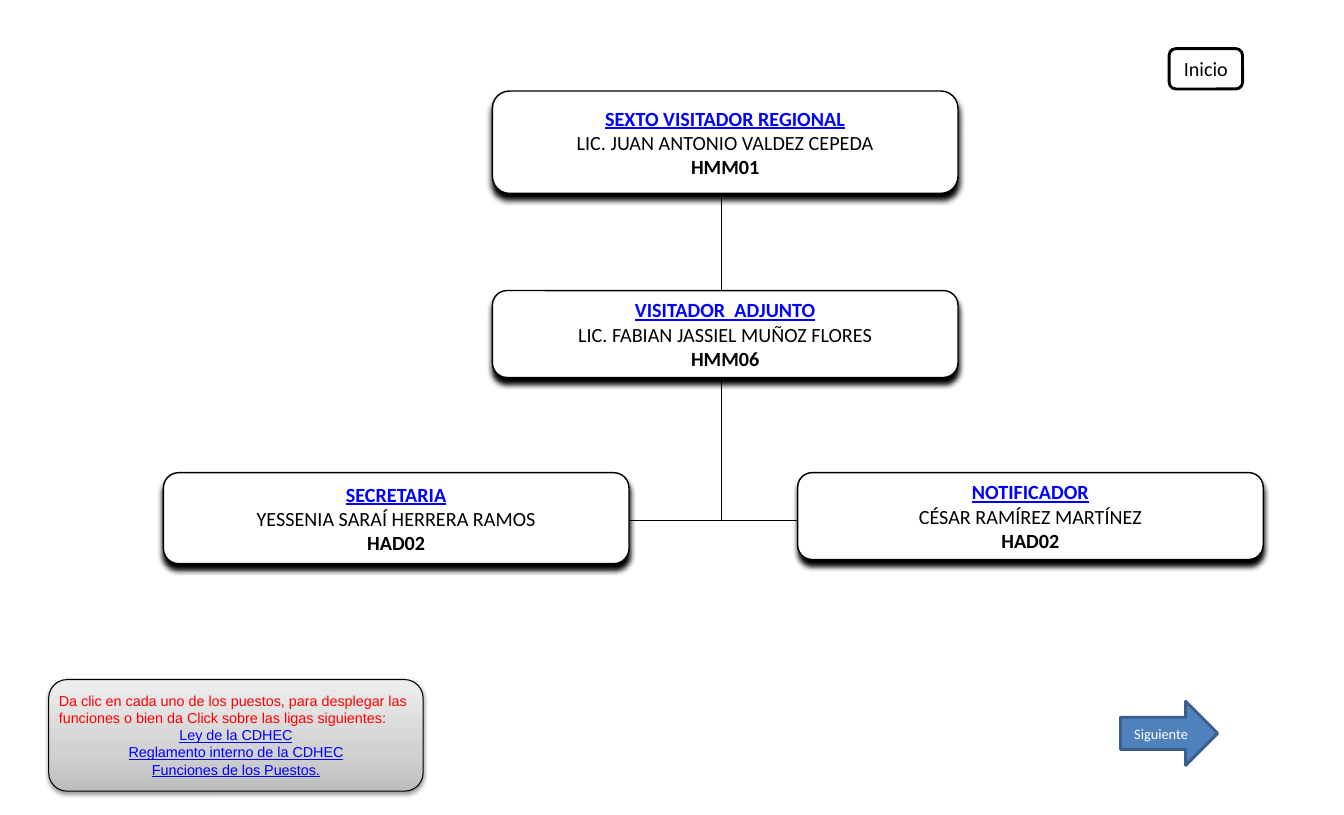
import copy
import pptx
import pptx.dml.color
import pptx.enum.shapes
import pptx.enum.text
import pptx.oxml
import pptx.oxml.ns
import pptx.util

PX = 9144  # EMU in one px, at 100 px to the inch
COLORS = {"black": "000000", "white": "FFFFFF", "link": "0000FF",
          "red": "FF0000", "blue": "4F81BD", "navy": "3A5F8C",
          "dark": "BDBDBD", "mid": "D1D1D1", "light": "EEEEEE"}
FORMS = pptx.enum.shapes.MSO_SHAPE
ALIGN = pptx.enum.text.PP_ALIGN

# Posts: left, top, height, post, person, grade
POSTS = [
    (476, 88, 99, "SEXTO VISITADOR REGIONAL", "LIC. JUAN ANTONIO VALDEZ CEPEDA", "HMM01"),
    (476, 281, 84, "VISITADOR  ADJUNTO", "LIC. FABIAN JASSIEL MUÑOZ FLORES", "HMM06"),
    (771, 457, 84, "NOTIFICADOR", "CÉSAR RAMÍREZ MARTÍNEZ", "HAD02"),
    (158, 457, 88, "SECRETARIA", "YESSENIA SARAÍ HERRERA RAMOS", "HAD02"),
]
WIDTH = 450
HINT = ("Da clic en cada uno de los puestos, para desplegar las funciones "
        "o bien da Click sobre las ligas siguientes:")
LINKS = ["Ley de la CDHEC", "Reglamento interno de la CDHEC", "Funciones de los Puestos."]


def px(*nums):
    return [num * PX for num in nums]


def color(name):
    return pptx.dml.color.RGBColor.from_string(COLORS[name])


def add_shape(slide, form, rect, fill, line, weight):
    shape = slide.shapes.add_shape(form, *px(*rect))
    shape.shadow.inherit = False
    shape.fill.solid()
    shape.fill.fore_color.rgb = color(fill)
    shape.line.color.rgb = color(line)
    shape.line.width = pptx.util.Pt(weight)
    return shape


def add_shade(shape, blur, dist, alpha):
    space = pptx.oxml.ns.nsdecls("a")
    shade = pptx.oxml.parse_xml(
        f'<a:outerShdw {space} blurRad="{pptx.util.Pt(blur)}" dist="{pptx.util.Pt(dist)}" '
        f'dir="5400000" rotWithShape="0"><a:srgbClr val="{COLORS["black"]}">'
        f'<a:alpha val="{alpha * 1000}"/></a:srgbClr></a:outerShdw>')
    shape._element.spPr.find(pptx.oxml.ns.qn("a:effectLst")).append(shade)


def add_blend(shape, stops):
    shape.fill.gradient()
    shape.fill.gradient_angle = 90
    group = shape._element.spPr.find(".//" + pptx.oxml.ns.qn("a:gsLst"))
    group.insert(1, copy.deepcopy(group[0]))
    for stop, (place, name) in zip(shape.fill.gradient_stops, stops):
        stop.position = place
        stop.color.rgb = color(name)


def write(frame, lines, size, face):
    """Each line is text, colour, bold, underline and alignment."""
    for i, (text, tint, bold, under, align) in enumerate(lines):
        para = frame.paragraphs[0] if i == 0 else frame.add_paragraph()
        para.text = text
        para.alignment = align
        font = para.font
        font.size, font.name = pptx.util.Pt(size), face
        font.bold, font.underline = bold, under
        font.color.rgb = color(tint)


def add_line(slide, *ends):
    line = slide.shapes.add_connector(pptx.enum.shapes.MSO_CONNECTOR.STRAIGHT, *px(*ends))
    line.line.color.rgb = color("black")
    line.line.width = pptx.util.Pt(0.75)
    line._element.spPr.append(pptx.oxml.parse_xml(
        f'<a:effectLst {pptx.oxml.ns.nsdecls("a")}/>'))


def add_post(slide, left, top, height, post, person, grade):
    shape = add_shape(slide, FORMS.ROUNDED_RECTANGLE, (left, top, WIDTH, height),
                      "white", "black", 1)
    add_shade(shape, 4, 4, 100)
    frame = shape.text_frame
    frame.word_wrap = False
    frame.margin_left = frame.margin_right = 17 * PX
    frame.margin_top = frame.margin_bottom = 9 * PX
    write(frame, [(post, "link", True, True, ALIGN.CENTER),
                  (person, "black", False, False, ALIGN.CENTER),
                  (grade, "black", True, False, ALIGN.CENTER)], 14, "Calibri")


def add_button(slide, form, rect, fill, line, text, size, tint):
    shape = add_shape(slide, form, rect, fill, line, 2)
    write(shape.text_frame, [(text, tint, False, False, ALIGN.CENTER)], size, "Calibri")


def add_note(slide):
    panel = add_shape(slide, FORMS.ROUNDED_RECTANGLE, (47, 657, 362, 108),
                      "light", "black", 0.75)
    add_blend(panel, [(0, "dark"), (0.35, "mid"), (1, "light")])
    add_shade(panel, 3.1, 1.6, 38)
    frame = slide.shapes.add_textbox(*px(47, 664, 362, 94)).text_frame
    frame.word_wrap = True
    lines = [(HINT, "red", False, False, ALIGN.LEFT)]
    lines += [(link, "link", False, True, ALIGN.CENTER) for link in LINKS]
    write(frame, lines, 10, "Arial")


def main():
    deck = pptx.Presentation()
    deck.slide_width, deck.slide_height = px(1299, 788)
    slide = deck.slides.add_slide(deck.slide_layouts[6])

    # Chart of posts, with the lines behind the boxes
    add_line(slide, 697, 189, 697, 503)
    add_line(slide, 606, 503, 771, 503)
    for post in POSTS:
        add_post(slide, *post)

    # Note and buttons
    add_note(slide)
    add_button(slide, FORMS.ROUNDED_RECTANGLE, (1130, 47, 71, 39),
               "white", "black", "Inicio", 14, "black")
    add_button(slide, FORMS.RIGHT_ARROW, (1083, 678, 94, 62),
               "blue", "navy", "Siguiente", 10, "white")

    deck.save("out.pptx")


if __name__ == "__main__":
    main()
